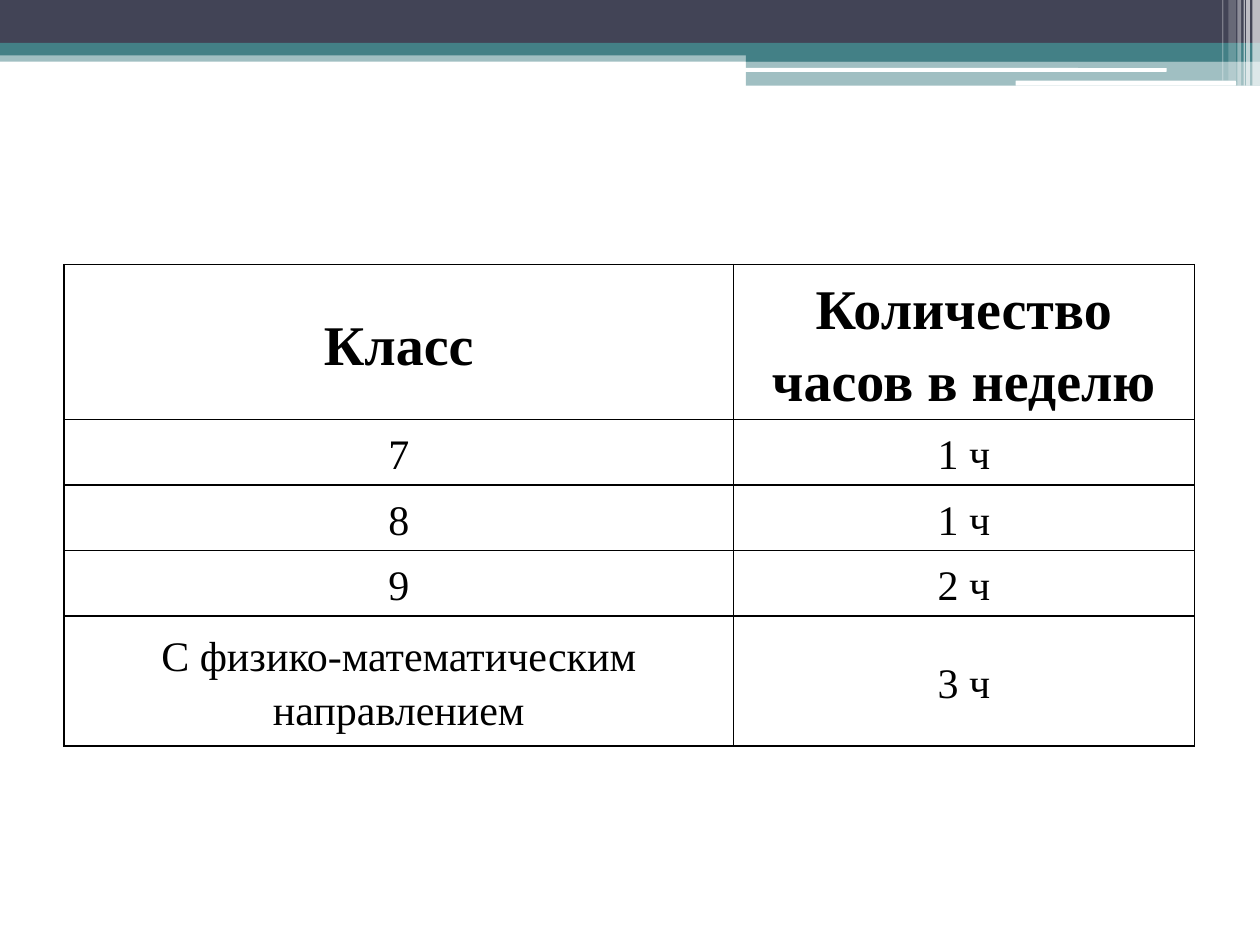
from lxml import etree
from pptx import Presentation
from pptx.dml.color import RGBColor
from pptx.enum.shapes import MSO_SHAPE
from pptx.enum.text import MSO_ANCHOR, PP_ALIGN
from pptx.oxml.ns import qn
from pptx.util import Inches, Pt

RECT, ROUND = MSO_SHAPE.RECTANGLE, MSO_SHAPE.ROUNDED_RECTANGLE
MIDDLE, CENTER = MSO_ANCHOR.MIDDLE, PP_ALIGN.CENTER
FONT = "Times New Roman"
COLORS = {"navy": "424456", "teal": "438086", "white": "FFFFFF", "black": "000000"}

ROWS = [
    ("Класс", "Количество часов в неделю"),
    ("7", "1 ч"),
    ("8", "1 ч"),
    ("9", "2 ч"),
    ("С физико-математическим направлением", "3 ч"),
]
WIDTHS = [5.31, 3.66]
HEIGHTS = [1.23, 0.52, 0.52, 0.52, 1.03]

# Banner bands: shape, left, top, width, height, color, opacity
BANDS = [
    (RECT, 0, 0.4, 10, 0.09, "teal", 50),
    (RECT, 0, 0, 10, 0.34, "navy", 100),
    (RECT, 0, 0.34, 10, 0.1, "teal", 100),
    (RECT, 5.92, 0.39, 4.08, 0.1, "teal", 100),
    (RECT, 5.92, 0.48, 4.08, 0.2, "teal", 50),
    (ROUND, 5.91, 0.54, 3.35, 0.03, "white", 100),
    (ROUND, 8.06, 0.64, 1.75, 0.04, "white", 100),
]
# Upright stripes at the right end: left, width, height, opacity
STRIPES = [
    (9.94, 0.06, 0.68, 65),
    (9.89, 0.03, 0.68, 65),
    (9.87, 0.01, 0.68, 60),
    (9.82, 0.03, 0.68, 40),
    (9.75, 0.06, 0.64, 20),
    (9.7, 0.01, 0.64, 30),
]


def rgb(name):
    return RGBColor.from_string(COLORS[name])


def add_band(slide, kind, left, top, width, height, color, alpha):
    band = slide.shapes.add_shape(
        kind, Inches(left), Inches(top), Inches(width), Inches(height))
    band.shadow.inherit = False
    band.line.fill.background()
    band.fill.solid()
    band.fill.fore_color.rgb = rgb(color)
    if alpha < 100:
        tint = band.fill._xPr.find(".//" + qn("a:srgbClr"))
        etree.SubElement(tint, qn("a:alpha"), val=str(alpha * 1000))


def add_borders(cell):
    props = cell._tc.get_or_add_tcPr()
    for spot, side in enumerate(("lnL", "lnR", "lnT", "lnB")):
        line = etree.Element(qn("a:" + side), w=str(Pt(1)))
        fill = etree.SubElement(line, qn("a:solidFill"))
        etree.SubElement(fill, qn("a:srgbClr"), val=COLORS["black"])
        props.insert(spot, line)


def fill_cell(cell, text, head):
    cell.fill.background()
    cell.vertical_anchor = MIDDLE
    cell.margin_left = cell.margin_right = Inches(0.07)
    cell.margin_top = cell.margin_bottom = 0
    para = cell.text_frame.paragraphs[0]
    para.alignment = CENTER
    para.line_spacing = 1.15
    run = para.add_run()
    run.text = text
    run.font.name = FONT
    run.font.size = Pt(32 if head else 24)
    run.font.bold = head
    run.font.color.rgb = rgb("black")
    add_borders(cell)


def main():
    deck = Presentation()
    deck.slide_width, deck.slide_height = Inches(10), Inches(7.5)
    slide = deck.slides.add_slide(deck.slide_layouts[6])

    # Banner
    for band in BANDS:
        add_band(slide, *band)
    for left, width, height, alpha in STRIPES:
        add_band(slide, RECT, left, 0, width, height, "white", alpha)

    # Table of hours
    table = slide.shapes.add_table(
        len(ROWS), len(WIDTHS), Inches(0.51), Inches(2.1),
        Inches(sum(WIDTHS)), Inches(sum(HEIGHTS))).table
    table.horz_banding = False
    for col, width in zip(table.columns, WIDTHS):
        col.width = Inches(width)
    for row, height in zip(table.rows, HEIGHTS):
        row.height = Inches(height)
    for r, texts in enumerate(ROWS):
        for c, text in enumerate(texts):
            fill_cell(table.cell(r, c), text, r == 0)

    deck.save("out.pptx")


if __name__ == "__main__":
    main()
